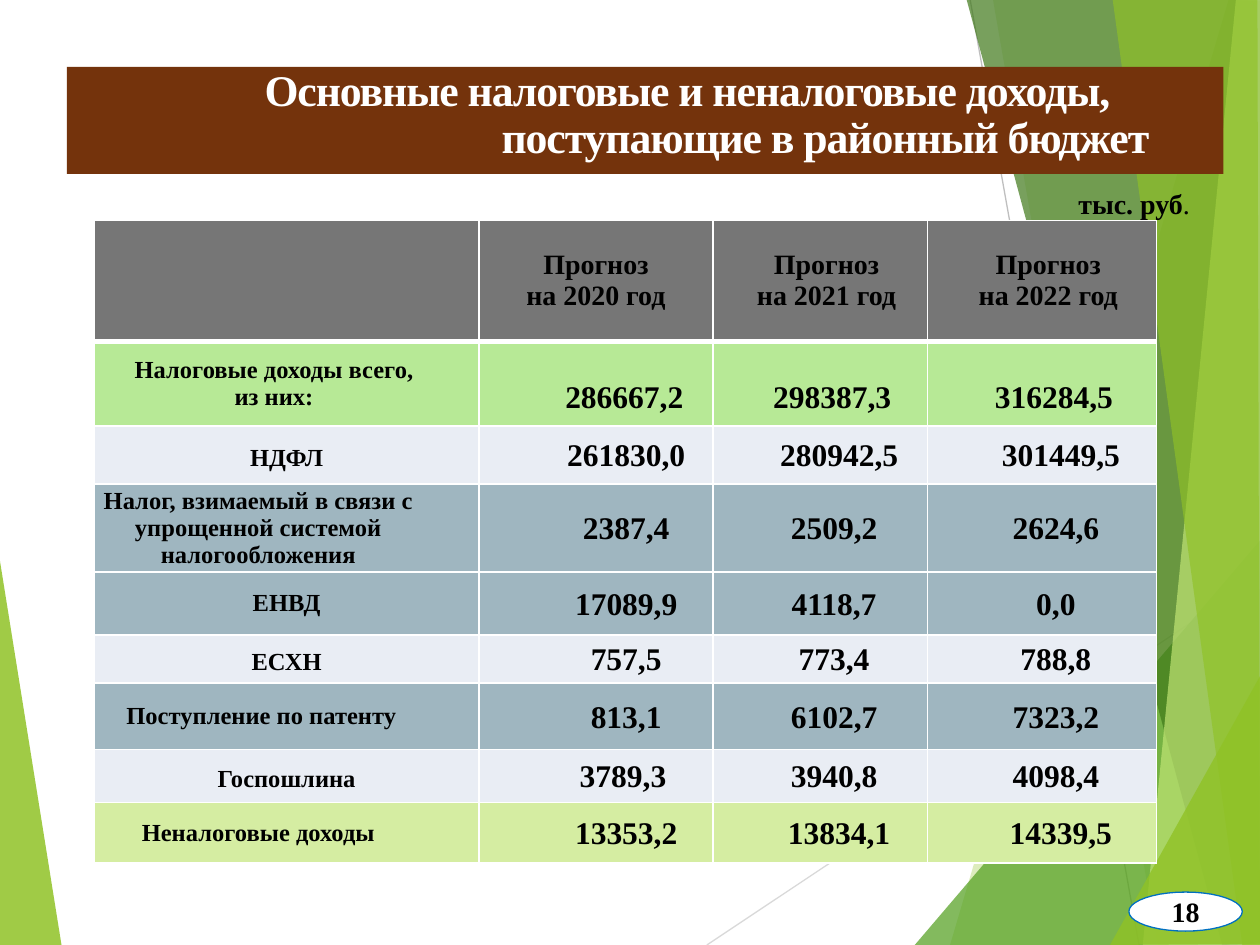
import math
from dataclasses import dataclass

from lxml import etree
from pptx import Presentation, util as u
from pptx.dml.color import RGBColor
from pptx.enum import shapes, text
from pptx.oxml.ns import qn


@dataclass(frozen=True)
class Theme:
    font: str = "Times New Roman"
    ink: str = "000000"
    white: str = "FFFFFF"
    banner: str = "74330C"
    header: str = "767676"
    total: str = "B7E996"
    light: str = "E9EDF4"
    dark: str = "9FB6C0"
    other: str = "D5EDA2"
    badge: str = "0070C0"
    title_size: int = 25
    value_size: int = 18
    base_size: int = 16
    label_size: int = 14


T = Theme()
TITLE = "Основные налоговые и неналоговые доходы,\vпоступающие в районный бюджет "
UNIT, PAGE = "тыс. руб", "18"

# points, colour, opacity in percent
LEFT_FACET = ([(-0.01, 4.39), (0.49, 7.51), (-0.01, 7.5)], "90C226", 85)
RIGHT_FACETS = [
    ([(9.75, 0), (7.54, 7.5), (10.02, 7.51), (10.01, 0.01)], "90C226", 30),
    ([(7.88, -0.01), (9.19, 7.5), (10.01, 7.5), (10.01, -0.01)], "90C226", 20),
    ([(7.26, 7.5), (10, 4.29), (10.01, 7.5)], "54A021", 72),
    ([(7.67, -0.01), (9.7, 7.5), (10.01, 7.49), (10.01, -0.01)], "3F7819", 70),
    ([(9.81, -0.01), (9.07, 7.5), (10.01, 7.5), (10, -0.01)], "C0E474", 70),
    ([(8.83, -0.01), (9.86, 7.5), (10, 7.5), (9.98, -0.01)], "90C226", 65),
    ([(8.81, 7.5), (10.01, 5.35), (10.01, 7.49)], "90C226", 80),
]
RAYS = [((5.61, 7.5), (10.01, 4.57), "D9D9D9"), ((7.7, 0), (9.04, 7.5), "BFBFBF")]

COLS = [3.05, 1.86, 1.7, 1.82]
HEADER_HEIGHT = 0.96
YEARS = ["2020", "2021", "2022"]
# label, values, fill, height, right indent of label, left indents of values
ROWS = [
    ("Налоговые доходы всего,\vиз них:", ["286667,2", "298387,3", "316284,5"],
     T.total, 0.67, 0.2, (0.45, 0.19, 0.19)),
    ("НДФЛ", ["261830,0", "280942,5", "301449,5"], T.light, 0.46, 0, (0.48, 0.3, 0.3)),
    ("Налог, взимаемый в связи с упрощенной системой налогообложения",
     ["2387,4", "2509,2", "2624,6"], T.dark, 0.7, 0.45, (0.48, 0.22, 0.22)),
    ("ЕНВД", ["17089,9", "4118,7", "0,0"], T.dark, 0.5, 0, (0.48, 0.22, 0.22)),
    ("ЕСХН", ["757,5", "773,4", "788,8"], T.light, 0.38, 0, (0.48, 0.22, 0.22)),
    ("Поступление по патенту", ["813,1", "6102,7", "7323,2"],
     T.dark, 0.53, 0.4, (0.48, 0.22, 0.22)),
    ("Госпошлина", ["3789,3", "3940,8", "4098,4"], T.light, 0.42, 0, (0.43, 0.22, 0.22)),
    ("Неналоговые доходы", ["13353,2", "13834,1", "14339,5"],
     T.other, 0.48, 0.45, (0.48, 0.3, 0.3)),
]


def rgb(c):
    return RGBColor.from_string(c)


def style(r, size, color=T.ink, bold=True, spc=0):
    f = r.font
    f.name, f.size, f.bold = T.font, u.Pt(size), bold
    f.color.rgb = rgb(color)
    if spc:
        r._r.get_or_add_rPr().set("spc", str(round(spc * 100)))


def write(tf, words, size, color=T.ink, align=text.PP_ALIGN.CENTER, left=0, right=0,
          first=0, leading=None, spc=0):
    """Fill the first paragraph; left, right and first are indents in inches."""
    p = tf.paragraphs[0]
    p.text, p.alignment = words, align
    if leading:
        p.line_spacing = u.Pt(leading)
    pPr = p._p.get_or_add_pPr()
    for name, inches in (("marL", left), ("marR", right), ("indent", first)):
        pPr.set(name, str(u.Inches(inches)))
    for r in p.runs:
        style(r, size, color, spc=spc)
    return p


def margins(box, left=0, top=0, right=0, bottom=0):
    box.margin_left, box.margin_top = u.Inches(left), u.Inches(top)
    box.margin_right, box.margin_bottom = u.Inches(right), u.Inches(bottom)


def polygon(s, points, fill, opacity=100):
    emu = [(u.Inches(x), u.Inches(y)) for x, y in points]
    fb = s.shapes.build_freeform(*emu[0])
    fb.add_line_segments(emu[1:], close=True)
    sp = fb.convert_to_shape()
    sp.shadow.inherit = False
    sp.fill.solid()
    sp.fill.fore_color.rgb = rgb(fill)
    sp.line.fill.background()
    if opacity < 100:
        clr = sp._element.spPr.find(qn("a:solidFill"))[0]
        etree.SubElement(clr, qn("a:alpha")).set("val", str(opacity * 1000))
    return sp


def ray(s, start, end, color):
    ln = s.shapes.add_connector(shapes.MSO_CONNECTOR.STRAIGHT,
                                *[u.Inches(v) for v in start + end])
    ln.line.color.rgb, ln.line.width = rgb(color), u.Pt(0.75)
    etree.SubElement(ln._element.spPr, qn("a:effectLst"))


def paint(cell, fill, top=1, bottom=1):
    """Fill a cell and give it white borders; top and bottom are widths in points."""
    cell.fill.solid()
    cell.fill.fore_color.rgb = rgb(fill)
    margins(cell)
    cell.vertical_anchor = text.MSO_ANCHOR.MIDDLE
    tcPr = cell._tc.get_or_add_tcPr()
    for i, (side, width) in enumerate((("L", 1), ("R", 1), ("T", top), ("B", bottom))):
        ln = etree.Element(qn("a:ln" + side), w=str(u.Pt(width)))
        sf = etree.SubElement(ln, qn("a:solidFill"))
        etree.SubElement(sf, qn("a:srgbClr")).set("val", T.white)
        tcPr.insert(i, ln)


def income_table(s):
    heights = [HEADER_HEIGHT] + [row[3] for row in ROWS]
    tbl = s.shapes.add_table(len(heights), len(COLS), u.Inches(0.75), u.Inches(1.75),
                             u.Inches(sum(COLS)), u.Inches(sum(heights))).table
    for col, w in zip(tbl.columns, COLS):
        col.width = u.Inches(w)
    for row, h in zip(tbl.rows, heights):
        row.height = u.Inches(h)
    for c in range(len(COLS)):
        paint(tbl.cell(0, c), T.header, bottom=3)
    for c, year in enumerate(YEARS, 1):
        write(tbl.cell(0, c).text_frame, f"Прогноз\vна {year} год", T.base_size,
              left=0.1 if c > 1 else 0)
    for i, (label, values, fill, _, right, lefts) in enumerate(ROWS, 1):
        for c in range(len(COLS)):
            paint(tbl.cell(i, c), fill, top=3 if i == 1 else 1)
        write(tbl.cell(i, 0).text_frame, label, T.label_size, right=right,
              leading=19 if fill == T.light else None)
        for c, (value, left) in enumerate(zip(values, lefts), 1):
            cell = tbl.cell(i, c)
            write(cell.text_frame, value, T.value_size, left=left, leading=21.1)
            if fill == T.total:
                cell.vertical_anchor = text.MSO_ANCHOR.TOP
                cell.margin_top = u.Inches(0.29)


def text_box(s, *at):
    tf = s.shapes.add_textbox(*[u.Inches(v) for v in at]).text_frame
    tf.word_wrap = True
    return tf


def page_badge(s, cx=9.41, cy=7.235, rx=0.45, ry=0.155, n=40):
    angles = [2 * math.pi * k / n for k in range(n)]
    sp = polygon(s, [(cx + rx * math.cos(a), cy + ry * math.sin(a)) for a in angles], T.white)
    sp.line.color.rgb, sp.line.width = rgb(T.badge), u.Pt(0.75)
    tf = sp.text_frame
    margins(tf)
    tf.vertical_anchor = text.MSO_ANCHOR.MIDDLE
    write(tf, PAGE, T.base_size)


def main():
    prs = Presentation()
    prs.slide_width, prs.slide_height = u.Inches(10), u.Inches(7.5)
    s = prs.slides.add_slide(prs.slide_layouts[6])
    polygon(s, *LEFT_FACET)
    for line in RAYS:
        ray(s, *line)
    for facet in RIGHT_FACETS:
        polygon(s, *facet)

    polygon_free = s.shapes.add_shape(shapes.MSO_SHAPE.RECTANGLE,
                                      *[u.Inches(v) for v in (0.53, 0.53, 9.18, 0.85)])
    polygon_free.shadow.inherit = False
    polygon_free.fill.solid()
    polygon_free.fill.fore_color.rgb = rgb(T.banner)
    polygon_free.line.fill.background()
    tf = text_box(s, 0.3, 0.27, 9.38, 1.03)
    margins(tf, top=0.27)
    write(tf, TITLE.strip(), T.title_size, T.white, left=3.12, first=-2.19,
          leading=27, spc=-0.6)

    income_table(s)
    p = write(text_box(s, 8.46, 1.43, 1.31, 0.37), UNIT, T.base_size,
              align=text.PP_ALIGN.LEFT)
    r = p.add_run()
    r.text = "."
    style(r, T.base_size, bold=False)
    page_badge(s)
    prs.save("out.pptx")


if __name__ == "__main__":
    main()
